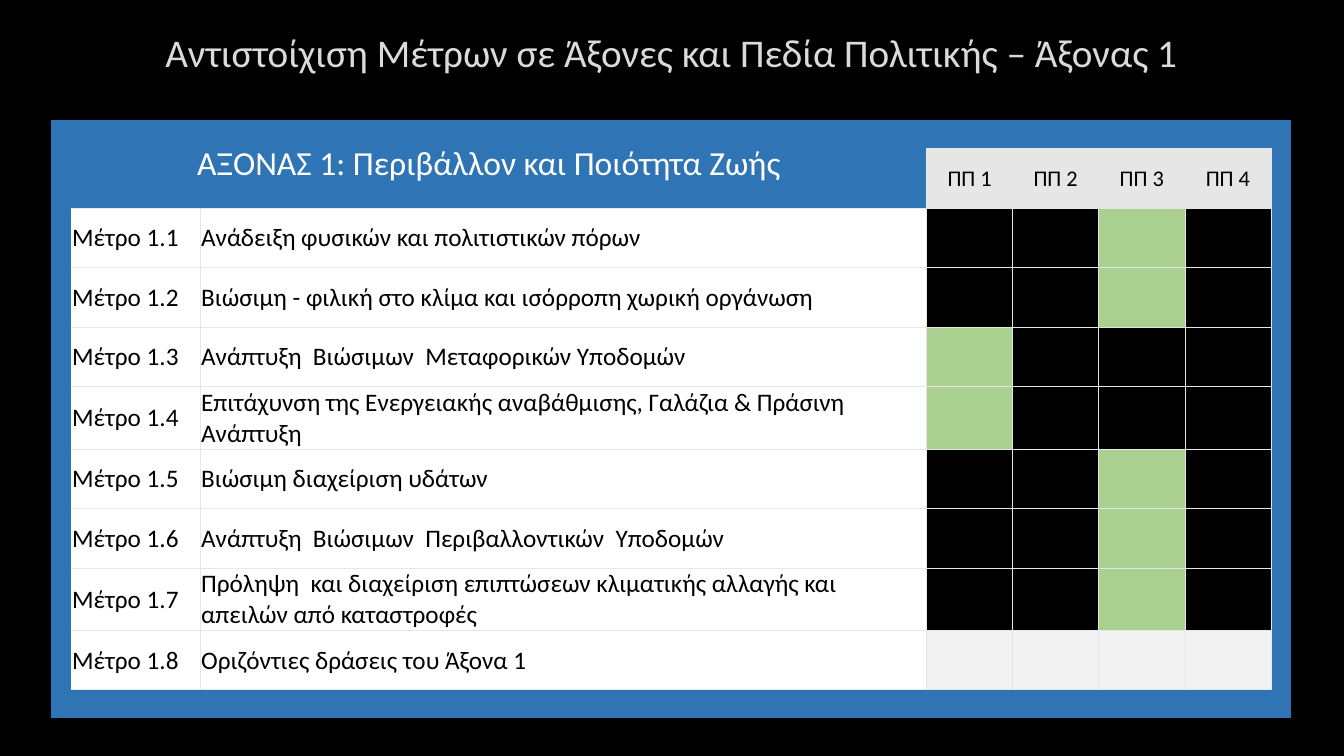
from lxml.etree import SubElement as Sub
from pptx import Presentation
from pptx.dml.color import RGBColor as RGB
from pptx.enum.text import MSO_ANCHOR as Anchor, PP_ALIGN as Align
from pptx.oxml.ns import qn
from pptx.util import Cm, Pt

BLUE, GREY, WHITE, GREEN, PALE = "2F75B5", "E7E6E6", "FFFFFF", "A9D08E", "F2F2F2"
FIELDS = ["ΠΠ 1", "ΠΠ 2", "ΠΠ 3", "ΠΠ 4"]
GOALS = [
    ("Ανάδειξη φυσικών και πολιτιστικών πόρων", 3),
    ("Βιώσιμη - φιλική στο κλίμα και ισόρροπη χωρική οργάνωση", 3),
    ("Ανάπτυξη  Βιώσιμων  Μεταφορικών Υποδομών", 1),
    ("Επιτάχυνση της Ενεργειακής αναβάθμισης, Γαλάζια & Πράσινη Ανάπτυξη", 1),
    ("Βιώσιμη διαχείριση υδάτων", 3),
    ("Ανάπτυξη  Βιώσιμων  Περιβαλλοντικών  Υποδομών", 3),
    ("Πρόληψη  και διαχείριση επιπτώσεων κλιματικής αλλαγής και απειλών από καταστροφές", 3),
    ("Οριζόντιες δράσεις του Άξονα 1", None),
]
WIDTHS = [0.51, 3.25, 18.3] + [2.17] * 4 + [0.51]
HEIGHTS = [0.71] + [1.5] * 9 + [0.71]
LAST_ROW, LAST_COL = len(HEIGHTS) - 1, len(WIDTHS) - 1


def paint(fmt, color):
    if color:
        fmt.solid()
        fmt.fore_color.rgb = RGB.from_string(color)
    else:
        fmt.background()


def write(frame, text, size=18, color="000000", align=Align.LEFT, font="Calibri"):
    para = frame.paragraphs[0]
    para.alignment = align
    run = para.add_run()
    run.text = text
    run.font.size, run.font.name = Pt(size), font
    run.font.color.rgb = RGB.from_string(color)


def shade(row, col):
    if row in (0, LAST_ROW) or col in (0, LAST_COL):
        return BLUE
    if row == 1:
        return GREY if col > 2 else BLUE
    if col < 3:
        return WHITE
    mark = GOALS[row - 2][1]
    if mark is None:
        return PALE
    return GREEN if col - 2 == mark else None


def ruled(row, col, down, right):
    near = row + down, col + right
    if not (0 <= near[0] <= LAST_ROW and 0 <= near[1] <= LAST_COL):
        return False
    if {col, near[1]} == {0, 1}:
        return False
    return shade(row, col) != BLUE or shade(*near) != BLUE


class Page:
    """Builds one slide in a shared style."""

    def __init__(self, deck, back="000000"):
        self.slide = deck.slides.add_slide(deck.slide_layouts[5])
        paint(self.slide.background.fill, back)

    def title(self, text, left, top, width, height):
        box = self.slide.shapes.title
        box.left, box.top, box.width, box.height = map(Cm, (left, top, width, height))
        box.text_frame.vertical_anchor = Anchor.MIDDLE
        write(box.text_frame, text, size=28, color="DADADA", align=Align.CENTER)

    def table(self, left, top):
        frame = self.slide.shapes.add_table(
            len(HEIGHTS), len(WIDTHS), Cm(left), Cm(top),
            Cm(sum(WIDTHS)), Cm(sum(HEIGHTS)))
        grid = frame.table
        grid.first_row = grid.horz_banding = False
        for col, width in zip(grid.columns, WIDTHS):
            col.width = Cm(width)
        for row, height in zip(grid.rows, HEIGHTS):
            row.height = Cm(height)
        for row in range(len(HEIGHTS)):
            for col in range(len(WIDTHS)):
                self.cell(grid.cell(row, col), row, col)
        return grid

    def cell(self, cell, row, col):
        cell.vertical_anchor = Anchor.MIDDLE
        cell.margin_left = cell.margin_right = cell.margin_top = Cm(0.02)
        cell.margin_bottom = 0
        self.edge(cell, "L", ruled(row, col, 0, -1))
        self.edge(cell, "R", ruled(row, col, 0, 1))
        self.edge(cell, "T", ruled(row, col, -1, 0))
        self.edge(cell, "B", ruled(row, col, 1, 0))
        paint(cell.fill, shade(row, col))
        if row == 1 and 3 <= col < LAST_COL:
            write(cell.text_frame, FIELDS[col - 3], size=16, align=Align.CENTER)
        elif 2 <= row < LAST_ROW and col in (1, 2):
            text = f"Μέτρο 1.{row - 1}" if col == 1 else GOALS[row - 2][0]
            write(cell.text_frame, text)
        elif (row, col) == (0, 0):
            write(cell.text_frame, "ΑΞΟΝΑΣ 1: Περιβάλλον και Ποιότητα Ζωής",
                  size=24, color=WHITE, align=Align.CENTER)
        else:
            Sub(cell.text_frame.paragraphs[0]._p, qn("a:endParaRPr"), sz="1000")

    def edge(self, cell, side, drawn):
        line = Sub(cell._tc.get_or_add_tcPr(), qn(f"a:ln{side}"), w=str(Pt(0.5)))
        if drawn:
            Sub(Sub(line, qn("a:solidFill")), qn("a:srgbClr"), val=GREY)
        else:
            Sub(line, qn("a:noFill"))


def main():
    deck = Presentation()
    deck.slide_width, deck.slide_height = Cm(33.87), Cm(19.05)
    page = Page(deck)
    grid = page.table(1.29, 3.03)
    grid.cell(0, 0).merge(grid.cell(1, 2))
    page.title("Αντιστοίχιση Μέτρων σε Άξονες και Πεδία Πολιτικής – Άξονας 1",
               2.54, 0.41, 28.75, 1.8)
    deck.save("out.pptx")


if __name__ == "__main__":
    main()
